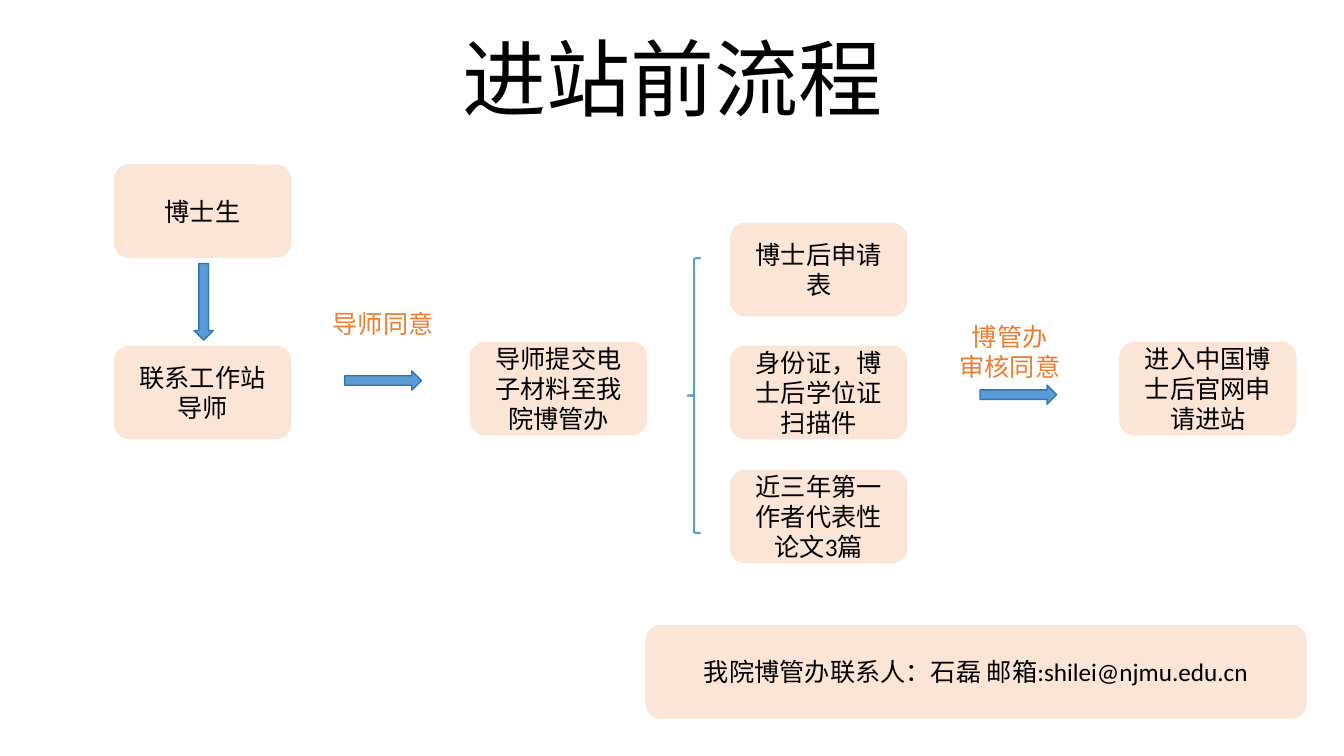
from pptx import Presentation
from pptx.dml.color import RGBColor
from pptx.enum.shapes import MSO_SHAPE
from pptx.enum.text import MSO_ANCHOR, MSO_AUTO_SIZE, PP_ALIGN
from pptx.util import Pt

PX = 9144  # one px is a hundredth of an inch
TITLE_ONLY = 5
BOX = MSO_SHAPE.ROUNDED_RECTANGLE
ARROW = MSO_SHAPE.RIGHT_ARROW
BRACE = MSO_SHAPE.LEFT_BRACE
CENTER = PP_ALIGN.CENTER
TOP, MIDDLE, BOTTOM = MSO_ANCHOR.TOP, MSO_ANCHOR.MIDDLE, MSO_ANCHOR.BOTTOM
NO_AUTOFIT = MSO_AUTO_SIZE.NONE

FONT = "Calibri"
COLORS = {
    "text": "000000",
    "box": "FBE5D6",
    "arrow": "5B9BD5",
    "arrow_edge": "2E75B6",
    "approval": "ED7D31",
}


def color(name):
    return RGBColor.from_string(COLORS[name])


def write(shape, text, size=18, ink="text", anchor=MIDDLE, line_spacing=None):
    frame = shape.text_frame
    frame.word_wrap = True
    frame.auto_size = NO_AUTOFIT
    frame.vertical_anchor = anchor
    frame.text = text
    for paragraph in frame.paragraphs:
        paragraph.alignment = CENTER
        paragraph.line_spacing = line_spacing
        paragraph.font.name = FONT
        paragraph.font.size = Pt(size)
        paragraph.font.color.rgb = color(ink)


class FlowSlide:
    box_width, box_height = 176, 93
    arrow_length, arrow_thickness = 76, 19

    def __init__(self, presentation):
        self.slide = presentation.slides.add_slide(
            presentation.slide_layouts[TITLE_ONLY])

    def title(self, text, left, top, width, height):
        title = self.slide.shapes.title
        title.left, title.top = left * PX, top * PX
        title.width, title.height = width * PX, height * PX
        write(title, text, size=60, anchor=BOTTOM, line_spacing=0.9)

    def shape(self, kind, left, top, width, height, fill=None, edge=None, weight=1):
        shape = self.slide.shapes.add_shape(
            kind, left * PX, top * PX, width * PX, height * PX)
        shape.shadow.inherit = False
        if fill:
            shape.fill.solid()
            shape.fill.fore_color.rgb = color(fill)
        else:
            shape.fill.background()
        if edge:
            shape.line.color.rgb = color(edge)
            shape.line.width = Pt(weight)
        else:
            shape.line.fill.background()
        return shape

    def box(self, text, left, top, width=box_width):
        write(self.shape(BOX, left, top, width, self.box_height, "box"), text)

    def arrow(self, left, top, rotation=0):
        arrow = self.shape(ARROW, left, top, self.arrow_length,
                           self.arrow_thickness, "arrow", "arrow_edge")
        arrow.rotation = rotation

    def brace(self, left, top, width, height):
        self.shape(BRACE, left, top, width, height, edge="arrow", weight=1.5)

    def label(self, text, left, top, width, height):
        label = self.slide.shapes.add_textbox(
            left * PX, top * PX, width * PX, height * PX)
        write(label, text, ink="approval", anchor=TOP)


def main():
    presentation = Presentation()
    presentation.slide_width = 1333 * PX
    presentation.slide_height = 750 * PX
    flow = FlowSlide(presentation)
    flow.title("进站前流程", 167, 12, 1000, 121)

    # Candidate contacts a supervisor
    flow.box("博士生", 113, 163)
    flow.arrow(164, 290, rotation=90)
    flow.box("联系工作站导师", 113, 343)

    # Supervisor agrees and submits
    flow.label("导师同意", 320, 301, 120, 40)
    flow.arrow(342, 368)
    flow.box("导师提交电子材料至我院博管办", 466, 339)

    # Materials to submit, evenly stacked
    flow.brace(682, 256, 13, 273)
    materials = ["博士后申请表", "身份证，博士后学位证扫描件", "近三年第一作者代表性论文3篇"]
    for row, material in enumerate(materials):
        flow.box(material, 724, 221 + row * 245 // 2)

    # Office approves, candidate applies online
    flow.label("博管办\n审核同意", 937, 314, 129, 71)
    flow.arrow(972, 382)
    flow.box("进入中国博士后官网申请进站", 1110, 339)

    # Contact
    flow.box("我院博管办联系人：石磊 邮箱:shilei@njmu.edu.cn", 640, 620, width=656)

    presentation.save("out.pptx")


if __name__ == "__main__":
    main()
